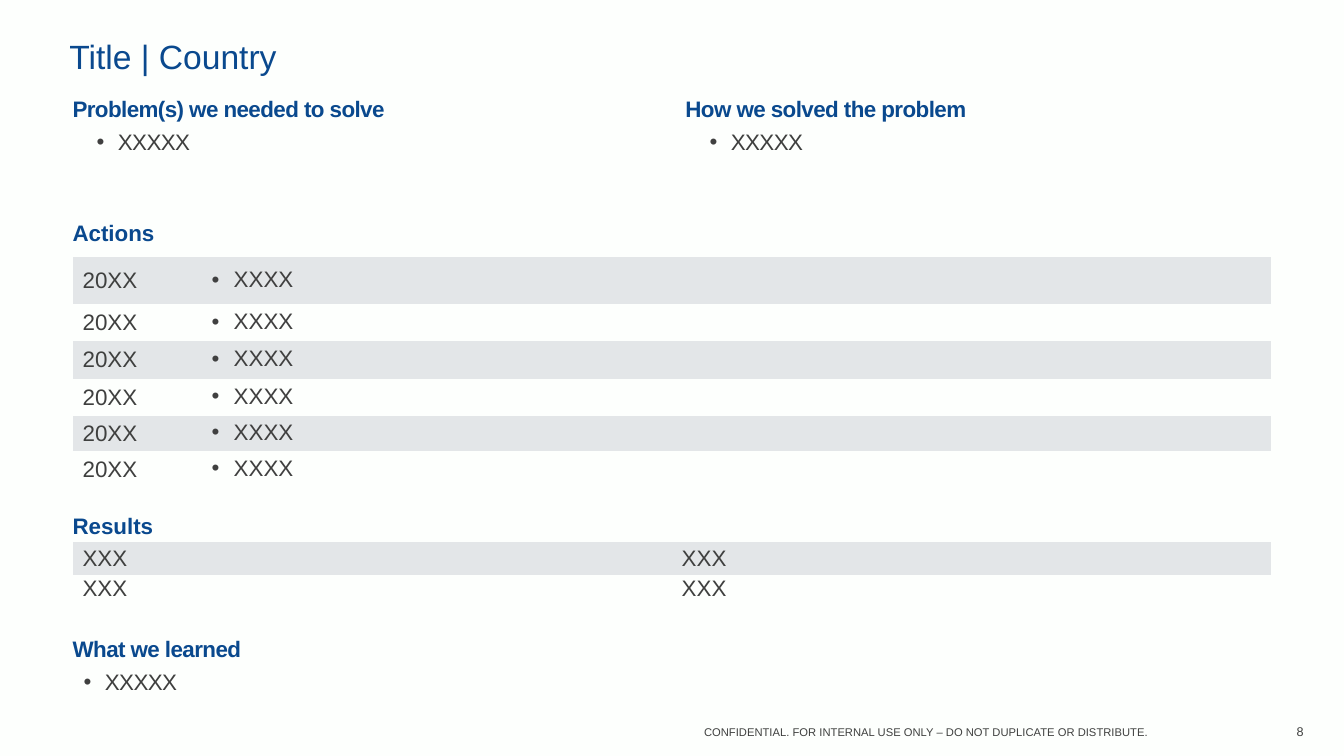
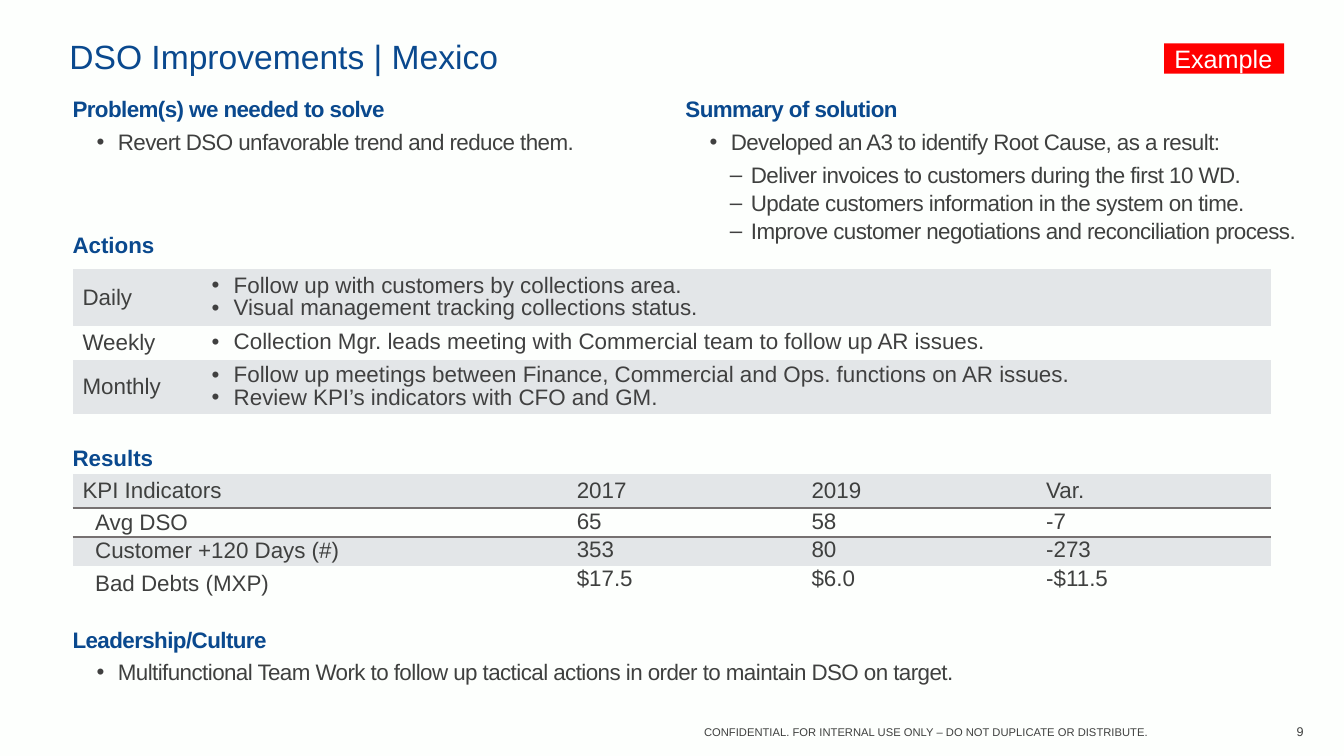
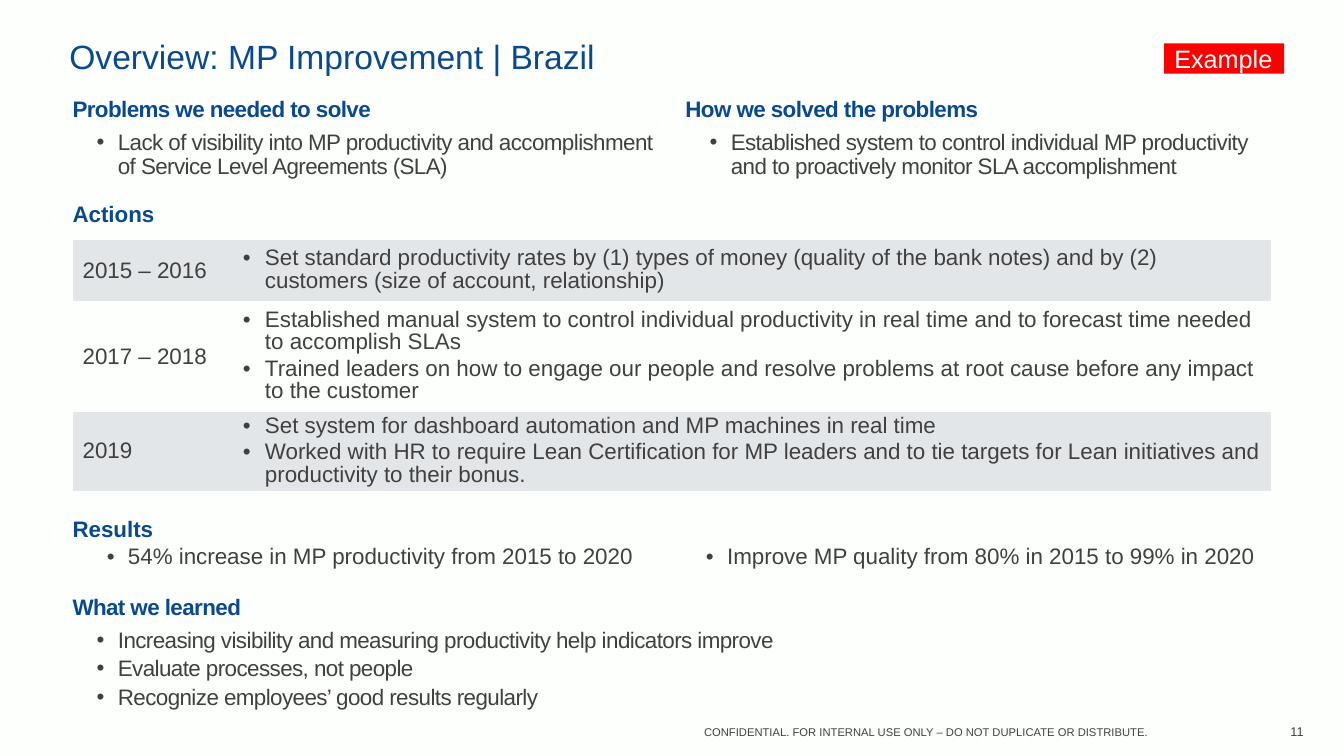
from copy import deepcopy

from lxml import etree
from pptx import Presentation
from pptx.dml.color import RGBColor
from pptx.enum.shapes import MSO_SHAPE
from pptx.enum.text import MSO_ANCHOR, PP_ALIGN
from pptx.oxml.ns import qn
from pptx.util import Pt

# Shared look
FONT = "Arial"
BLUE, TEXT, DARK = "0A498E", "3F403F", "404040"
PAPER, BAND, RULE, RED, WHITE = "FDFFFD", "E3E6E8", "767171", "FF0000", "FFFFFF"
PLAIN_TABLE = "{2D5ABB26-0587-4C30-8999-92F81FD0307C}"
FOOTER = "CONFIDENTIAL. FOR INTERNAL USE ONLY – DO NOT DUPLICATE OR DISTRIBUTE."

# Shared regions: left, top, width, height in points
LEFT, TABLE_WIDTH = 51.8, 856
TITLE_BOX = (42.5, 25.2, 592.5, 33.1)
PROBLEM_BOX = (LEFT, 70.5, 419, 47)
SOLUTION_BOX = (489.6, 70.5, 444, 47)
FOOTER_BOX = (480.2, 514.8, 363, 17.3)
NUMBER_BOX = (895, 513.4, 43.2, 18)
TAG_BOX = (831.6, 31, 85.7, 21.6)


def style(size, colour, bold=False, indent=(0, 0), bullet=None, tracking=0, **layout):
    return {"font": {"name": FONT, "size": Pt(size), "bold": bold}, "colour": colour,
            "indent": indent, "bullet": bullet, "tracking": tracking, "layout": layout}


def body(after, left=32.4, bullet="•"):
    return style(16, TEXT, indent=(left, -15.1), bullet=bullet, tracking=-40,
                 line_spacing=0.9, space_after=Pt(after))


def cell_bullet(after, left=23, hanging=-15.8):
    return style(16, DARK, indent=(left, hanging), bullet="•",
                 line_spacing=0.9, space_after=Pt(after))


def heading(left=0):
    return style(16, BLUE, bold=True, indent=(left, 0), tracking=-40,
                 line_spacing=0.9, space_after=Pt(6))


STYLES = {
    "title": style(24, BLUE, line_spacing=0.9),
    "footer": style(8, TEXT, alignment=PP_ALIGN.CENTER),
    "number": style(9, TEXT, alignment=PP_ALIGN.RIGHT),
    "tag": style(18, WHITE, indent=(7.2, 0), alignment=PP_ALIGN.LEFT),
    "heading": heading(),
    "inset heading": heading(9.4),
    "bullet": body(6),
    "tight bullet": body(3),
    "dash": body(3, 46.8, "–"),
    "table heading": style(16, BLUE, bold=True),
    "label": style(16, TEXT),
    "value": style(16, TEXT),
    "indented label": style(16, TEXT, indent=(9, 0)),
    "action": cell_bullet(6),
    "tight action": cell_bullet(3),
    "packed action": cell_bullet(0),
    "result": cell_bullet(3, 32.4, -15.1),
}


def rgb(value):
    return RGBColor.from_string(value)


def points(box):
    return [Pt(length) for length in box]


def add_bullet(properties, mark):
    colour = etree.SubElement(properties, qn("a:buClr"))
    etree.SubElement(colour, qn("a:srgbClr"), val=DARK)
    etree.SubElement(properties, qn("a:buFont"), typeface=FONT)
    etree.SubElement(properties, qn("a:buChar"), char=mark)


def write(frame, lines):
    """Fill a text frame with (style name, text) lines."""
    for index, (name, text) in enumerate(lines):
        look = STYLES[name]
        para = frame.add_paragraph() if index else frame.paragraphs[0]
        para.text = text
        properties = para._p.get_or_add_pPr()
        for key, length in zip(("marL", "indent"), look["indent"]):
            properties.set(key, str(int(Pt(length))))
        if look["bullet"]:
            add_bullet(properties, look["bullet"])
        for key, value in look["layout"].items():
            setattr(para, key, value)
        for span in para.runs:
            for key, value in look["font"].items():
                setattr(span.font, key, value)
            span.font.color.rgb = rgb(look["colour"])
            if look["tracking"]:
                span._r.get_or_add_rPr().set("spc", str(look["tracking"]))
        # Line breaks take the format of the text around them
        for line_break in para._p.findall(qn("a:br")):
            line_break.append(deepcopy(para.runs[0]._r.rPr))


def set_margins(target, left, top, right, bottom):
    sides = {"left": left, "top": top, "right": right, "bottom": bottom}
    for side, length in sides.items():
        setattr(target, f"margin_{side}", Pt(length))


def add_text(page, box, lines, anchor=MSO_ANCHOR.TOP, margins=(7.2, 3.6, 7.2, 3.6)):
    frame = page.shapes.add_textbox(*points(box)).text_frame
    frame.word_wrap = True
    frame.vertical_anchor = anchor
    set_margins(frame, *margins)
    write(frame, lines)


def add_panel(page, box, title, lines, title_style="heading"):
    add_text(page, box, [(title_style, title), *lines], margins=(0, 0, 0, 0))


def add_tag(page, box, text):
    tag = page.shapes.add_shape(MSO_SHAPE.RECTANGLE, *points(box))
    tag.shadow.inherit = False
    tag.fill.solid()
    tag.fill.fore_color.rgb = rgb(RED)
    tag.line.fill.background()
    tag.text_frame.vertical_anchor = MSO_ANCHOR.TOP
    set_margins(tag.text_frame, 0, 0, 0, 0)
    write(tag.text_frame, [("tag", text)])


def add_rule(cell, edge):
    line = etree.Element(qn(f"a:{edge}"), w=str(int(Pt(1.5))))
    fill = etree.SubElement(line, qn("a:solidFill"))
    etree.SubElement(fill, qn("a:srgbClr"), val=RULE)
    cell._tc.get_or_add_tcPr().insert(0, line)


def add_grid(page, top, title, columns, rows, title_height=21, banded=True, ruled=False):
    """Heading row over rows of (height, cells); a cell is a list of lines."""
    heights = [title_height, *(height for height, _ in rows)]
    table = page.shapes.add_table(len(heights), len(columns), *points(
        (LEFT, top, sum(columns), sum(heights)))).table
    table.first_row = table.horz_banding = False
    table._tbl.tblPr.find(qn("a:tableStyleId")).text = PLAIN_TABLE
    for column, width in zip(table.columns, columns):
        column.width = Pt(width)
    for row, height in zip(table.rows, heights):
        row.height = Pt(height)

    # Heading across the whole table
    first = table.cell(0, 0)
    first.merge(table.cell(0, len(columns) - 1))
    first.vertical_anchor = MSO_ANCHOR.MIDDLE
    set_margins(first, 0, 0.7, 7.2, 0.7)
    write(first.text_frame, [("table heading", title)])

    # Rows, every other one shaded
    for row_index, (_, cells) in enumerate(rows, 1):
        for column_index, lines in enumerate(cells):
            cell = table.cell(row_index, column_index)
            set_margins(cell, 7.2, 0.7, 7.2, 0.7)
            at_top = lines[0][0] == "value"
            cell.vertical_anchor = MSO_ANCHOR.TOP if at_top else MSO_ANCHOR.MIDDLE
            write(cell.text_frame, lines)
            if banded and row_index % 2:
                cell.fill.solid()
                cell.fill.fore_color.rgb = rgb(BAND)
            else:
                cell.fill.background()
            if ruled and row_index < 3:
                add_rule(cell, "lnB" if row_index == 1 else "lnT")


def add_actions(page, top, label_width, rows, title_height=34):
    """Rows are (height, label, bullet style, bullet texts)."""
    add_grid(page, top, "Actions", (label_width, TABLE_WIDTH - label_width),
             [(height, [[("label", label)], [(name, text) for text in texts]])
              for height, label, name, texts in rows], title_height)


def add_results(page, top, columns, rows, **options):
    """Rows are (height, style of first cell, style of other cells, texts)."""
    add_grid(page, top, "Results", columns,
             [(height, [[(other if index else first, text)]
                        for index, text in enumerate(texts)])
              for height, first, other, texts in rows], **options)


def add_page(deck, title, number, tag=None):
    page = deck.slides.add_slide(deck.slide_layouts[6])
    add_text(page, FOOTER_BOX, [("footer", FOOTER)])
    add_text(page, NUMBER_BOX, [("number", number)], MSO_ANCHOR.MIDDLE)
    add_text(page, TITLE_BOX, [("title", title)], MSO_ANCHOR.BOTTOM)
    if tag:
        add_tag(page, TAG_BOX, tag)
    return page


def build_template(deck):
    page = add_page(deck, "Title | Country", "8")
    add_panel(page, PROBLEM_BOX, "Problem(s) we needed to solve", [("bullet", "XXXXX")])
    add_panel(page, SOLUTION_BOX, "How we solved the problem", [("bullet", "XXXXX")])
    add_actions(page, 149.8, 85, [(height, "20XX", "action", ["XXXX"])
                                  for height in (33.5, 26.5, 27, 26.5, 25, 26.5)])
    add_results(page, 365.8, (TABLE_WIDTH / 2,) * 2, [
        (24, "label", "label", ["XXX"] * 2),
        (26, "value", "value", ["XXX"] * 2)])
    add_panel(page, (42.5, 455.8, 428, 47), "What we learned",
              [("bullet", "XXXXX")], "inset heading")


def build_mexico(deck):
    page = add_page(deck, "DSO Improvements | Mexico", "9", "Example")
    add_panel(page, PROBLEM_BOX, "Problem(s) we needed to solve", [
        ("bullet", "Revert DSO unfavorable trend and reduce them.")])
    add_panel(page, SOLUTION_BOX, "Summary of solution", [
        ("bullet", "Developed an A3 to identify Root Cause, as a result:"),
        ("dash", "Deliver invoices to customers during the first 10 WD."),
        ("dash", "Update customers information in the system on time."),
        ("dash", "Improve customer negotiations and reconciliation process.")])
    add_actions(page, 158.4, 85, [
        (40.5, "Daily", "packed action", [
            "Follow up with customers by collections area.",
            "Visual management tracking collections status."]),
        (24.5, "Weekly", "action", [
            "Collection Mgr. leads meeting with Commercial team to follow up AR issues."]),
        (38.5, "Monthly", "packed action", [
            "Follow up meetings between Finance, Commercial and Ops. functions on AR issues.",
            "Review KPI’s indicators with CFO and GM."])])
    add_results(page, 317.5, (353, 167.67, 167.67, 167.66), [
        (24.4, "label", "label", ["KPI Indicators", "2017", "2019", "Var."]),
        (20.6, "indented label", "value", ["Avg DSO", "65", "58", "-7"]),
        (20.6, "indented label", "value", ["Customer +120 Days (#)", "353", "80", "-273"]),
        (26, "indented label", "value", ["Bad Debts (MXP)", "$17.5", "$6.0", "-$11.5"])],
        ruled=True)
    add_panel(page, (LEFT, 449.3, 840, 47), "Leadership/Culture", [
        ("bullet", "Multifunctional Team Work to follow up tactical actions "
                   "in order to maintain DSO on target.")])


def build_brazil(deck):
    page = add_page(deck, "Overview: MP Improvement | Brazil", "11", "Example")
    add_panel(page, PROBLEM_BOX, "Problems we needed to solve", [
        ("bullet", "Lack of visibility into MP productivity and accomplishment "
                   "of Service Level Agreements (SLA)")])
    add_panel(page, SOLUTION_BOX, "How we solved the problems", [
        ("bullet", "Established system to control individual MP productivity \v"
                   "and to proactively monitor SLA accomplishment")])
    add_actions(page, 135.4, 107.3, [
        (43.5, "2015 – 2016", "action", [
            "Set standard productivity rates by (1) types of money (quality of the "
            "bank notes) and by (2) customers (size of account, relationship)"]),
        (79.3, "2017 – 2018", "tight action", [
            "Established manual system to control individual productivity in real time "
            "and to forecast time needed to accomplish SLAs",
            "Trained leaders on how to engage our people and resolve problems at root "
            "cause before any impact to the customer"]),
        (55.7, "2019", "tight action", [
            "Set system for dashboard automation and MP machines in real time",
            "Worked with HR to require Lean Certification for MP leaders and to tie "
            "targets for Lean initiatives and productivity to their bonus."])],
        title_height=36)
    add_results(page, 367.9, (TABLE_WIDTH / 2,) * 2, [
        (19, "result", "result", ["54% increase in MP productivity from 2015 to 2020",
                                  "Improve MP quality from 80% in 2015 to 99% in 2020"])],
        banded=False)
    add_panel(page, (LEFT, 426.2, 840, 47), "What we learned", [
        ("tight bullet", "Increasing visibility and measuring productivity help indicators improve"),
        ("tight bullet", "Evaluate processes, not people"),
        ("tight bullet", "Recognize employees’ good results regularly")])


def main():
    deck = Presentation()
    deck.slide_width, deck.slide_height = Pt(960), Pt(540)
    backdrop = deck.slide_master.background.fill
    backdrop.solid()
    backdrop.fore_color.rgb = rgb(PAPER)
    for build in (build_template, build_mexico, build_brazil):
        build(deck)
    deck.save("out.pptx")


if __name__ == "__main__":
    main()
